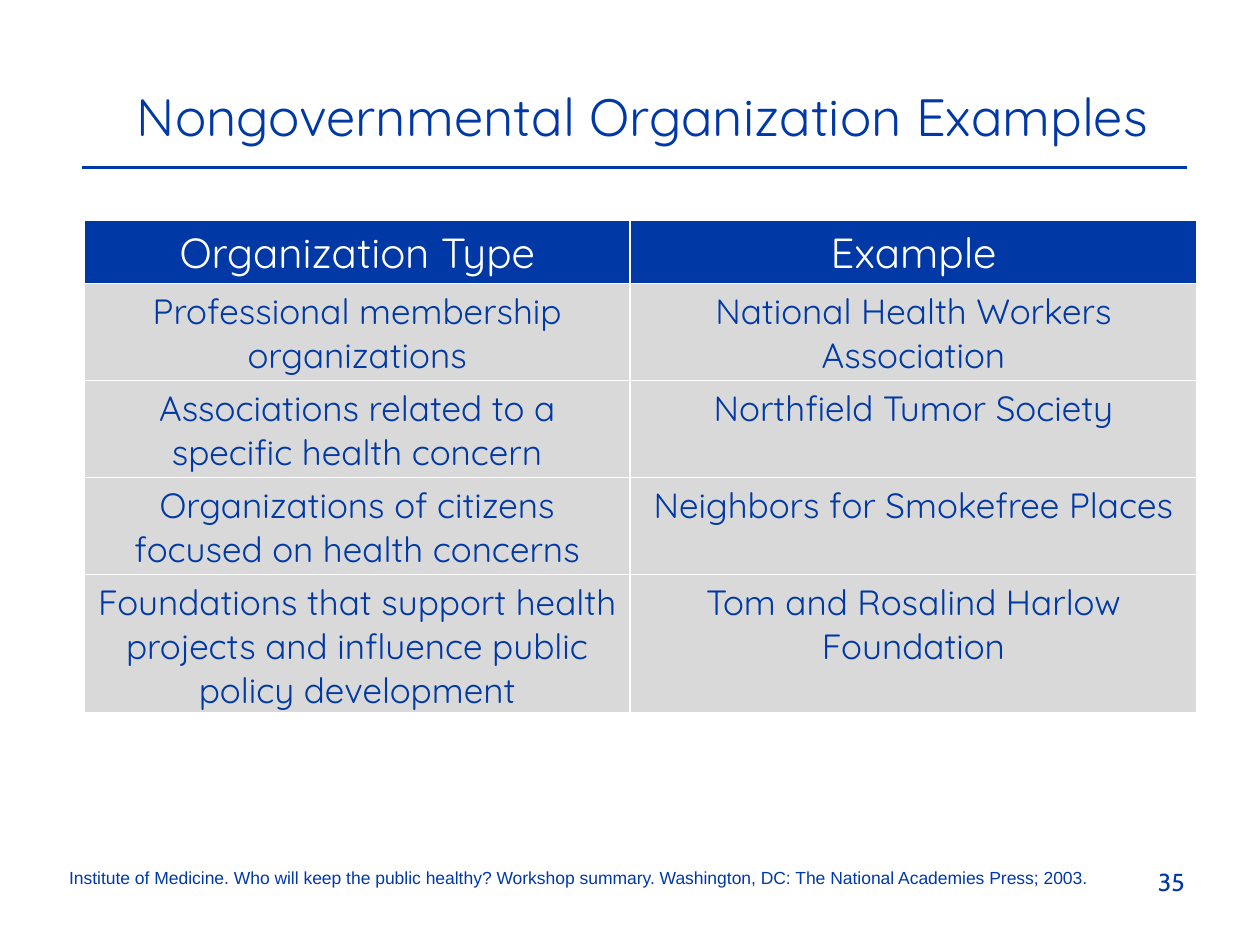
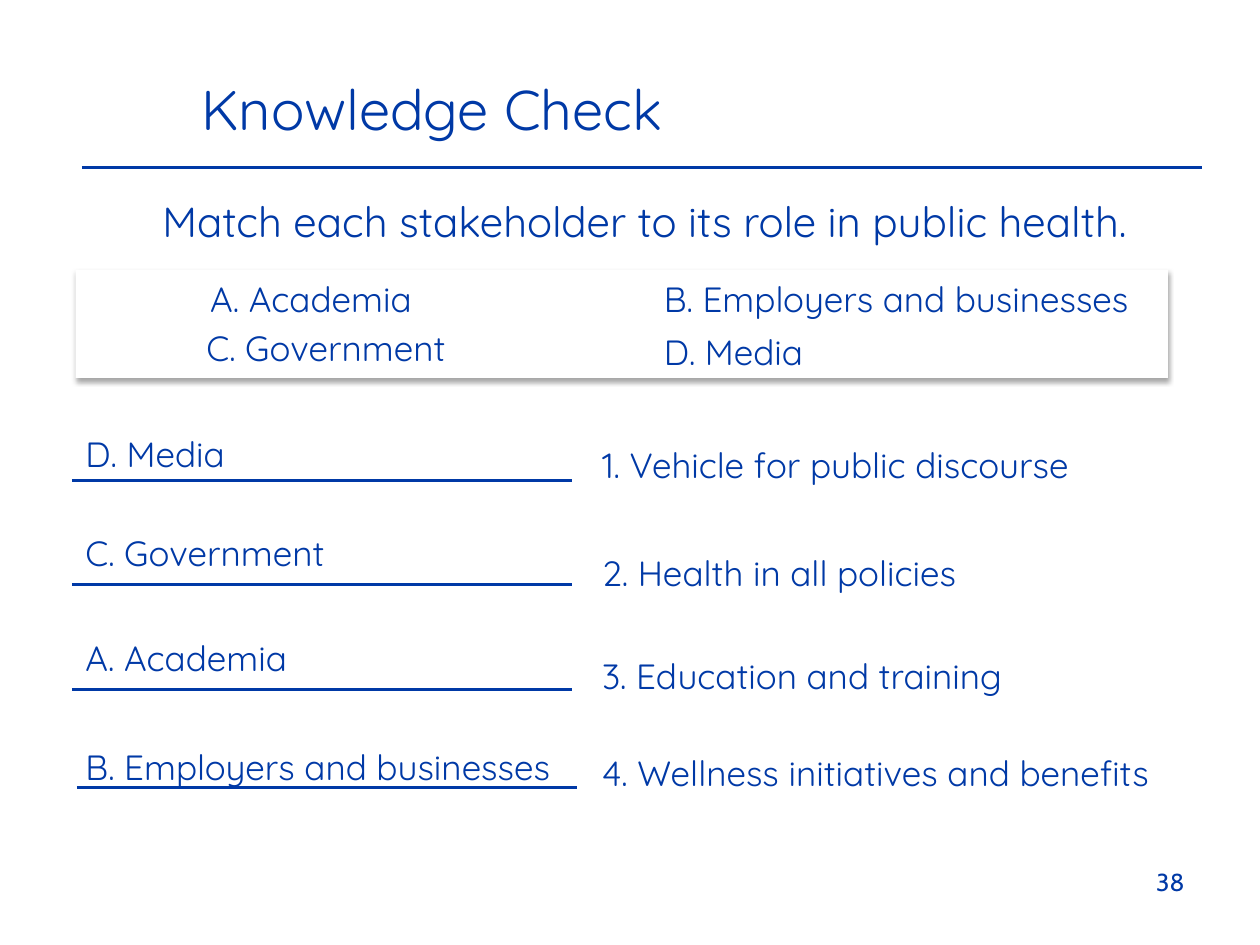
"""Builds two public health slides: an organization table and a matching quiz."""
from lxml import etree
from pptx import Presentation
from pptx.dml.color import RGBColor
from pptx.enum.shapes import MSO_CONNECTOR, MSO_SHAPE
from pptx.enum.text import MSO_ANCHOR, PP_ALIGN
from pptx.oxml.ns import qn
from pptx.util import Inches, Pt

LEFT, CENTER, RIGHT = PP_ALIGN.LEFT, PP_ALIGN.CENTER, PP_ALIGN.RIGHT
TOP, MIDDLE = MSO_ANCHOR.TOP, MSO_ANCHOR.MIDDLE
RECT = MSO_SHAPE.RECTANGLE
STRAIGHT = MSO_CONNECTOR.STRAIGHT
COLORS = {"blue": "0039A6", "gray": "D9D9D9", "white": "FFFFFF", "black": "000000"}
TITLE_ONLY = 5
RULE_LEFT, RULE_TOP = 0.65, 1.33


def rgb(name):
    return RGBColor.from_string(COLORS[name])


def write(tf, text, size=20, font="Quicksand", color="blue", align=LEFT, anchor=TOP):
    tf.word_wrap = True
    tf.vertical_anchor = anchor
    p = tf.paragraphs[0]
    p.alignment = align
    r = p.add_run()
    r.text = text
    r.font.size = Pt(size)
    r.font.name = font
    r.font.bold = False
    r.font.color.rgb = rgb(color)


class Deck:
    def __init__(self):
        self.prs = Presentation()
        self.prs.slide_width, self.prs.slide_height = Inches(10), Inches(7.5)
        self.s = None

    def slide(self, title, at, rule_right, number, **fmt):
        self.s = self.prs.slides.add_slide(self.prs.slide_layouts[TITLE_ONLY])
        sp = self.s.shapes.title
        sp.left, sp.top, sp.width, sp.height = map(Inches, at)
        write(sp.text_frame, title, **fmt)
        self.line(RULE_LEFT, rule_right, RULE_TOP)
        self.text(str(number), (7.17, 6.83, 2.33, 0.52), size=14, font="Cabin", align=RIGHT)

    def text(self, text, at, **fmt):
        sp = self.s.shapes.add_textbox(*map(Inches, at))
        write(sp.text_frame, text, **fmt)

    def line(self, x1, x2, y):
        ln = self.s.shapes.add_connector(STRAIGHT, Inches(x1), Inches(y), Inches(x2), Inches(y))
        ln.line.color.rgb = rgb("blue")
        ln.line.width = Pt(1.75)
        etree.SubElement(ln._element.spPr, qn("a:effectLst"))

    def card(self, at):
        sp = self.s.shapes.add_shape(RECT, *map(Inches, at))
        sp.fill.solid()
        sp.fill.fore_color.rgb = rgb("white")
        sp.line.fill.background()
        sp.shadow.inherit = False
        effects = sp._element.spPr.find(qn("a:effectLst"))
        shadow = etree.SubElement(effects, qn("a:outerShdw"), blurRad=str(Pt(3.1)),
                                  dist=str(Pt(1.8)), dir="5400000", rotWithShape="0")
        color = etree.SubElement(shadow, qn("a:srgbClr"), val=COLORS["black"])
        etree.SubElement(color, qn("a:alpha"), val="35000")

    def table(self, rows, left, top, widths, heights):
        frame = self.s.shapes.add_table(len(rows), len(widths), Inches(left), Inches(top),
                                        Inches(sum(widths)), Inches(sum(heights)))
        tbl = frame.table
        for col, width in zip(tbl.columns, widths):
            col.width = Inches(width)
        for i, (row, height) in enumerate(zip(rows, heights)):
            tbl.rows[i].height = Inches(height)
            fill, color, size = ("gray", "blue", 20) if i else ("blue", "white", 24)
            for j, text in enumerate(row):
                cell = tbl.cell(i, j)
                cell.fill.solid()
                cell.fill.fore_color.rgb = rgb(fill)
                write(cell.text_frame, text, size=size, color=color, align=CENTER)


def organizations(deck):
    deck.slide("Nongovernmental Organization Examples", (0.61, 0.62, 8.98, 0.61), 9.42, 35,
               size=30, align=CENTER)
    deck.text("Institute of Medicine. Who will keep the public healthy? Workshop summary. "
              "Washington, DC: The National Academies Press; 2003.",
              (0.45, 6.83, 8.52, 0.27), size=10, font="Arial")
    rows = [
        ("Organization Type", "Example"),
        ("Professional membership organizations", "National Health Workers Association"),
        ("Associations related to a specific health concern", "Northfield Tumor Society"),
        ("Organizations of citizens focused on health concerns",
         "Neighbors for Smokefree Places"),
        ("Foundations that support health projects and influence public policy development",
         "Tom and Rosalind Harlow Foundation"),
    ]
    deck.table(rows, 0.67, 1.75, (4.33, 4.5), (0.5, 0.77, 0.77, 0.77, 1.1))


def knowledge_check(deck):
    deck.slide("Knowledge Check", (1.5, 0.54, 4.25, 0.64), 9.54, 38, size=32)
    deck.text("Match each stakeholder to its role in public health.", (0.65, 1.5, 8.93, 0.5),
              size=24, align=CENTER)
    deck.card((0.6, 2.14, 8.67, 0.86))
    stakeholders = [
        ("A. Academia", 1.57, 2.15),
        ("B. Employers and businesses", 5.17, 2.15),
        ("C. Government", 1.54, 2.54),
        ("D. Media", 5.17, 2.57),
    ]
    for name, left, top in stakeholders:
        deck.text(name, (left, top, 4.09, 0.44))
    matches = [
        ("D. Media", 3.38, 0.57, 3.81, "1. Vehicle for public discourse", 3.47),
        ("C. Government", 4.17, 0.57, 4.64, "2. Health in all policies", 4.32),
        ("A. Academia", 5, 0.57, 5.47, "3. Education and training", 5.14),
        ("B. Employers and businesses", 5.87, 0.61, 6.25,
         "4. Wellness initiatives and benefits", 5.91),
    ]
    for answer, answer_top, line_left, line_top, role, role_top in matches:
        deck.text(answer, (0.58, answer_top, 4.09, 0.44))
        deck.line(line_left, line_left + 3.97, line_top)
        deck.text(role, (4.68, role_top, 4.83, 0.44), anchor=MIDDLE)


def main():
    deck = Deck()
    organizations(deck)
    knowledge_check(deck)
    deck.prs.save("out.pptx")


if __name__ == "__main__":
    main()
